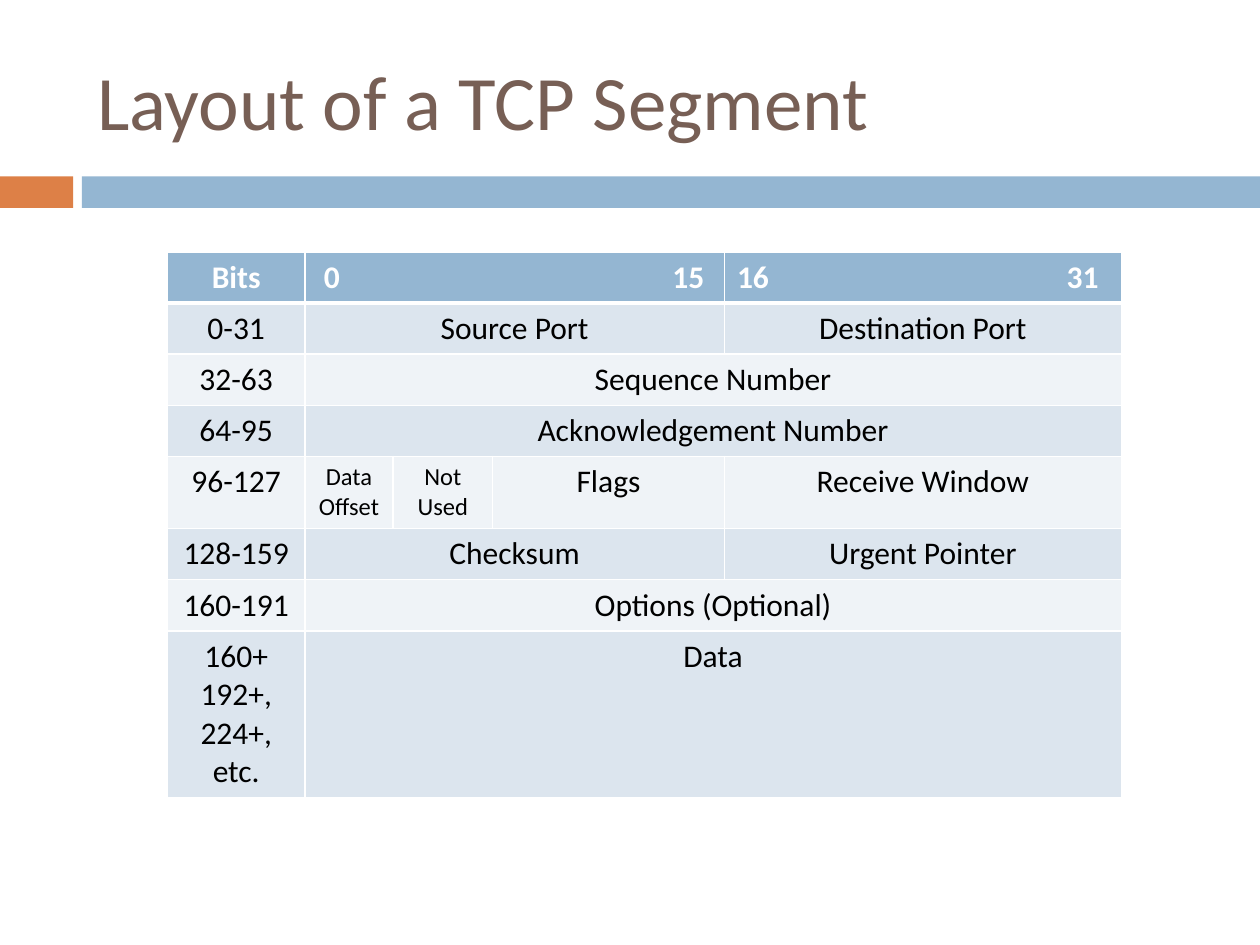
from typing import NamedTuple

from lxml.etree import SubElement
from pptx import Presentation
from pptx.dml.color import RGBColor
from pptx.enum.shapes import MSO_SHAPE
from pptx.enum.text import MSO_ANCHOR, MSO_AUTO_SIZE, PP_ALIGN
from pptx.oxml.ns import qn
from pptx.util import Inches, Pt

WIDTH, HEIGHT = Inches(10), Inches(7.5)
FONT = "Calibri"
COLORS = {
    "title": "775F55",
    "accent": "DD8047",
    "header": "94B6D2",
    "odd": "DCE5EE",
    "even": "EFF3F7",
    "border": "FFFFFF",
    "header_text": "FFFFFF",
    "body_text": "000000",
}
COLUMN_WIDTHS = (1.09, 0.7, 0.79, 1.84, 3.15)
ROW_HEIGHTS = (0.38, 0.38, 0.38, 0.38, 0.53, 0.38, 0.38, 0.76)


class Bar(NamedTuple):
    left: float  # share of the slide width
    width: float
    color: str


class Field(NamedTuple):
    text: str
    span: int = 1
    size: int = 18
    tab: float = 0  # right tab stop in inches
    inset: float = 0.1


BARS = (Bar(0, 0.058, "accent"), Bar(0.065, 0.935, "header"))
SEGMENT = (
    (Field("Bits"), Field("0\t15", 3, tab=3.02, inset=0.15), Field("16\t31", tab=2.87)),
    (Field("0-31"), Field("Source Port", 3), Field("Destination Port")),
    (Field("32-63"), Field("Sequence Number", 4)),
    (Field("64-95"), Field("Acknowledgement Number", 4)),
    (Field("96-127"), Field("Data Offset", size=14), Field("Not\nUsed", size=14),
     Field("Flags"), Field("Receive Window")),
    (Field("128-159"), Field("Checksum", 3), Field("Urgent Pointer")),
    (Field("160-191"), Field("Options (Optional)", 4)),
    (Field("160+ 192+, 224+, etc."), Field("Data", 4)),
)


def rgb(name: str) -> RGBColor:
    return RGBColor.from_string(COLORS[name])


def style_font(font, size: int, color: str, bold: bool = False) -> None:
    font.name, font.size, font.bold = FONT, Pt(size), bold
    font.color.rgb = rgb(color)


def draw_bar(slide, bar: Bar) -> None:
    shape = slide.shapes.add_shape(
        MSO_SHAPE.RECTANGLE, int(WIDTH * bar.left), Inches(1.4),
        int(WIDTH * bar.width), Inches(0.25))
    shape.shadow.inherit = False
    shape.fill.solid()
    shape.fill.fore_color.rgb = rgb(bar.color)
    shape.line.fill.background()


def style_cell(cell, row: int) -> None:
    """Add the white borders, thick under the header, and then the row's fill."""
    properties = cell._tc.get_or_add_tcPr()
    thick_side = {0: "lnB", 1: "lnT"}.get(row)
    for side in ("lnL", "lnR", "lnT", "lnB"):
        width = Pt(3 if side == thick_side else 1)
        line = SubElement(properties, qn(f"a:{side}"), w=str(width))
        fill = SubElement(line, qn("a:solidFill"))
        SubElement(fill, qn("a:srgbClr"), val=COLORS["border"])
    cell.fill.solid()
    cell.fill.fore_color.rgb = rgb("header" if row == 0 else "odd" if row % 2 else "even")


def write_field(cell, field: Field, is_header: bool) -> None:
    cell.margin_left = Inches(field.inset)
    cell.text_frame.text = field.text
    for paragraph in cell.text_frame.paragraphs:
        paragraph.alignment = PP_ALIGN.LEFT if field.tab else PP_ALIGN.CENTER
        if field.tab:
            tabs = SubElement(paragraph._p.get_or_add_pPr(), qn("a:tabLst"))
            SubElement(tabs, qn("a:tab"), pos=str(Inches(field.tab)), algn="r")
        for run in paragraph.runs:
            style_font(run.font, field.size,
                       "header_text" if is_header else "body_text", is_header)


def draw_segment(slide) -> None:
    frame = slide.shapes.add_table(
        len(ROW_HEIGHTS), len(COLUMN_WIDTHS), Inches(1.33), Inches(2),
        Inches(sum(COLUMN_WIDTHS)), Inches(sum(ROW_HEIGHTS)))
    table = frame.table
    table.horz_banding = False
    for column, width in zip(table.columns, COLUMN_WIDTHS):
        column.width = Inches(width)
    for row, height in zip(table.rows, ROW_HEIGHTS):
        row.height = Inches(height)
    frame.height = Inches(5.17)
    for row, fields in enumerate(SEGMENT):
        for column in range(len(COLUMN_WIDTHS)):
            style_cell(table.cell(row, column), row)
        column = 0
        for field in fields:
            cell = table.cell(row, column)
            if field.span > 1:
                cell.merge(table.cell(row, column + field.span - 1))
            write_field(cell, field, row == 0)
            column += field.span


def write_title(slide) -> None:
    title = slide.shapes.title
    title.left, title.top = Inches(0.67), Inches(0.25)
    title.width, title.height = Inches(8.92), Inches(1.08)
    text = title.text_frame
    text.text = "Layout of a TCP Segment"
    text.word_wrap = True
    text.auto_size = MSO_AUTO_SIZE.NONE
    text.vertical_anchor = MSO_ANCHOR.MIDDLE
    text.paragraphs[0].alignment = PP_ALIGN.LEFT
    style_font(text.paragraphs[0].runs[0].font, 44, "title")


def main() -> None:
    deck = Presentation()
    deck.slide_width, deck.slide_height = WIDTH, HEIGHT
    slide = deck.slides.add_slide(deck.slide_layouts[5])
    for bar in BARS:
        draw_bar(slide, bar)
    draw_segment(slide)
    write_title(slide)
    deck.save("out.pptx")


if __name__ == "__main__":
    main()
